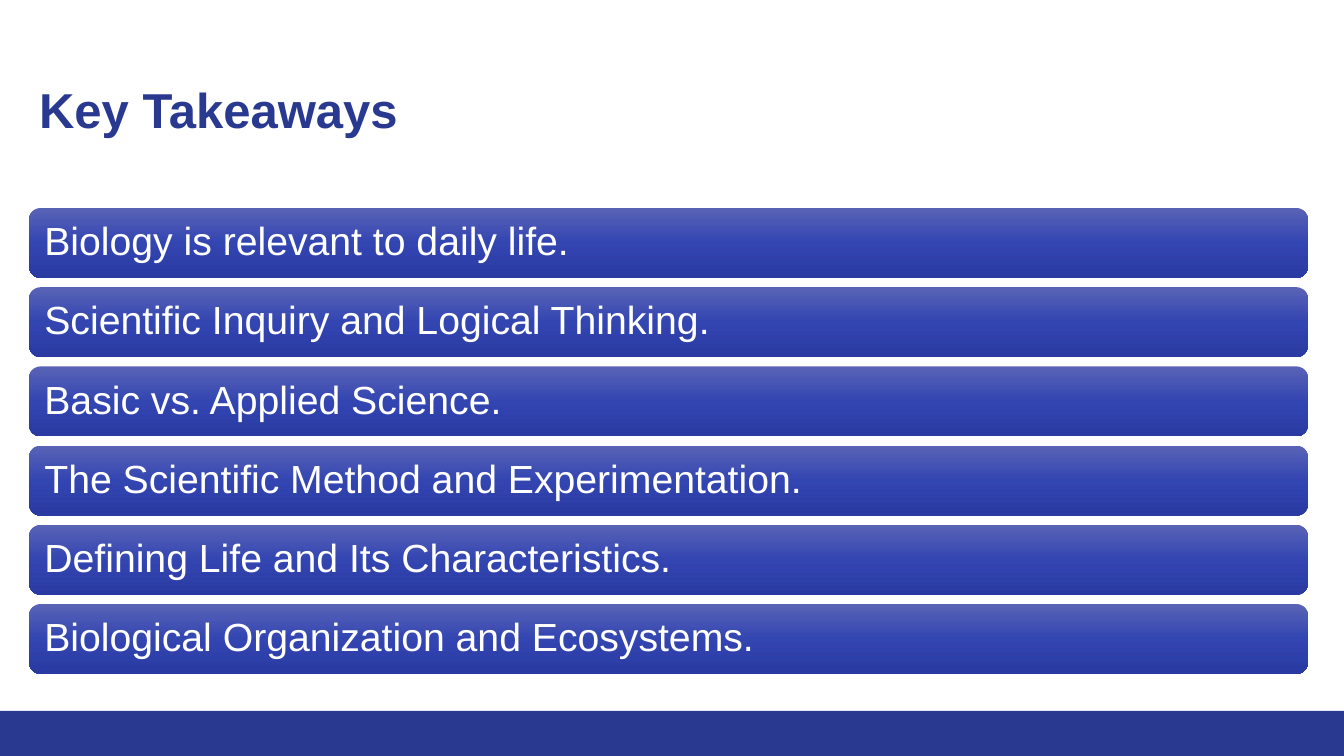
from copy import deepcopy

from pptx import Presentation
from pptx.dml.color import RGBColor
from pptx.enum.shapes import MSO_SHAPE
from pptx.enum.text import MSO_ANCHOR, PP_ALIGN
from pptx.oxml.ns import qn
from pptx.util import Emu, Pt

TITLE = "Key Takeaways"
POINTS = [
    "Biology is relevant to daily life.",
    "Scientific Inquiry and Logical Thinking.",
    "Basic vs. Applied Science.",
    "The Scientific Method and Experimentation.",
    "Defining Life and Its Characteristics.",
    "Biological Organization and Ecosystems.",
]

NAVY = RGBColor(0x2A, 0x39, 0x90)
WHITE = RGBColor(0xFF, 0xFF, 0xFF)
SHADES = [
    (0, RGBColor(0x59, 0x63, 0xB6)),
    (0.5, RGBColor(0x33, 0x45, 0xB1)),
    (1, RGBColor(0x29, 0x3A, 0xA2)),
]

SCALE = 914400 / 100.8
WIDE, HIGH = 1344, 756
LEFT, SPAN = 29, 1279
FIRST, LAST, BAR = 208, 604, 70
FOOT = 45


def px(num):
    return Emu(round(num * SCALE))


def place(shape, *box):
    shape.left, shape.top, shape.width, shape.height = map(px, box)


def write(shape, text, size, color, bold=False, pad=10):
    frame = shape.text_frame
    frame.word_wrap = True
    frame.vertical_anchor = MSO_ANCHOR.MIDDLE
    frame.margin_left = frame.margin_right = px(pad)
    frame.text = text
    para = frame.paragraphs[0]
    para.alignment = PP_ALIGN.LEFT
    para.line_spacing = 0.9
    font = para.runs[0].font
    font.name, font.size, font.bold = "Arial", Pt(size), bold
    font.color.rgb = color


def block(slide, kind, *box):
    shape = slide.shapes.add_shape(kind, *map(px, box))
    shape.shadow.inherit = False
    shape.line.fill.background()
    return shape


def shade(shape):
    """Fill with the three-stop gradient, light at the top."""
    fill = shape.fill
    fill.gradient()
    fill.gradient_angle = 270
    stops = shape.element.spPr.find(".//" + qn("a:gsLst"))
    stops.insert(1, deepcopy(stops[0]))
    for stop, (spot, color) in zip(fill.gradient_stops, SHADES):
        stop.position = spot
        stop.color.rgb = color


def main():
    deck = Presentation()
    deck.slide_width, deck.slide_height = px(WIDE), px(HIGH)
    slide = deck.slides.add_slide(deck.slide_layouts[5])

    foot = block(slide, MSO_SHAPE.RECTANGLE, 0, HIGH - FOOT, WIDE, FOOT)
    foot.fill.solid()
    foot.fill.fore_color.rgb = NAVY

    title = slide.shapes.title
    place(title, LEFT, 40, SPAN, 146)
    write(title, TITLE, 35, NAVY, bold=True)

    step = (LAST - FIRST) / (len(POINTS) - 1)
    for row, point in enumerate(POINTS):
        top = FIRST + row * step
        bar = block(slide, MSO_SHAPE.ROUNDED_RECTANGLE, LEFT, top, SPAN, BAR)
        shade(bar)
        write(bar, point, 28, WHITE, pad=12)

    deck.save("out.pptx")


if __name__ == "__main__":
    main()
